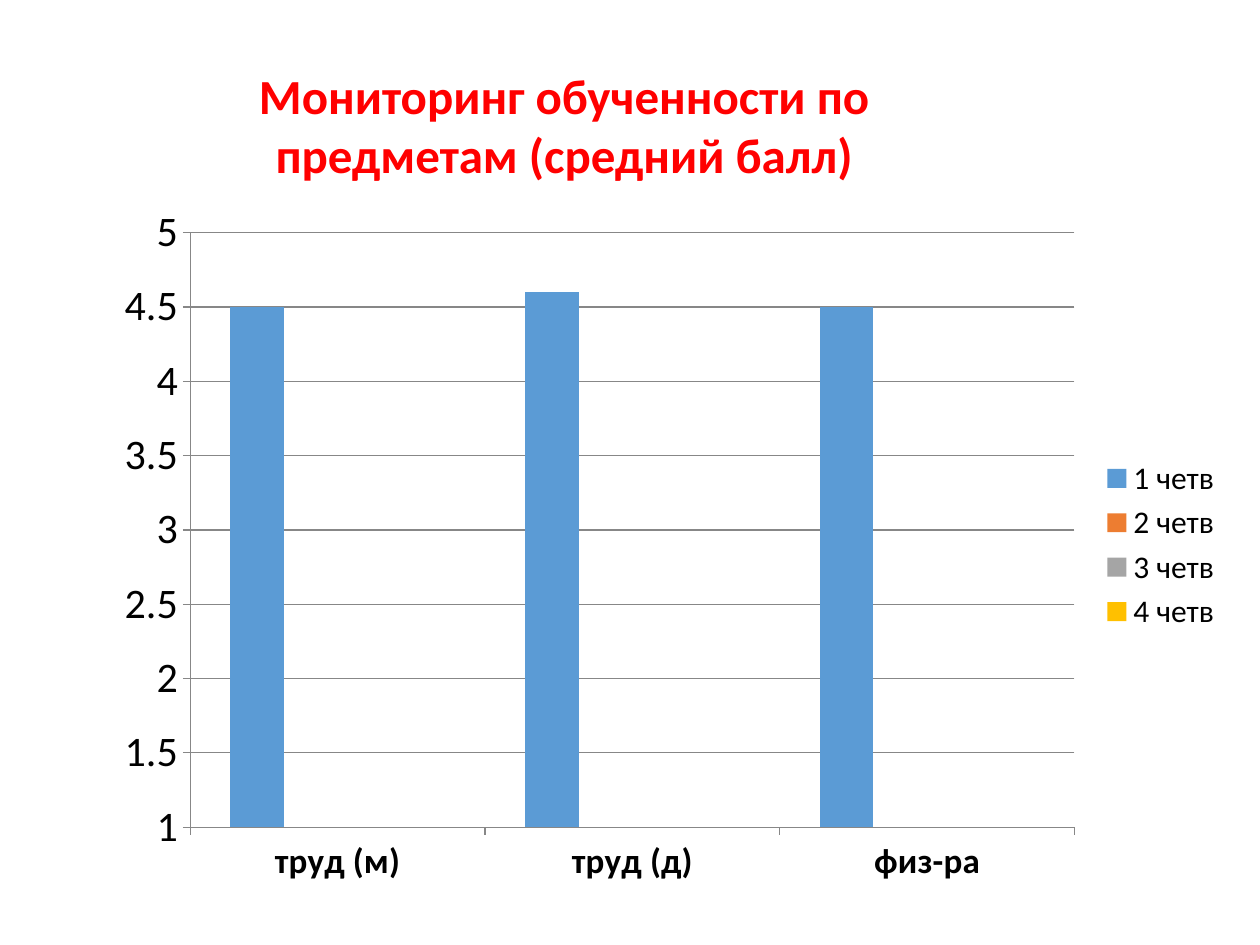
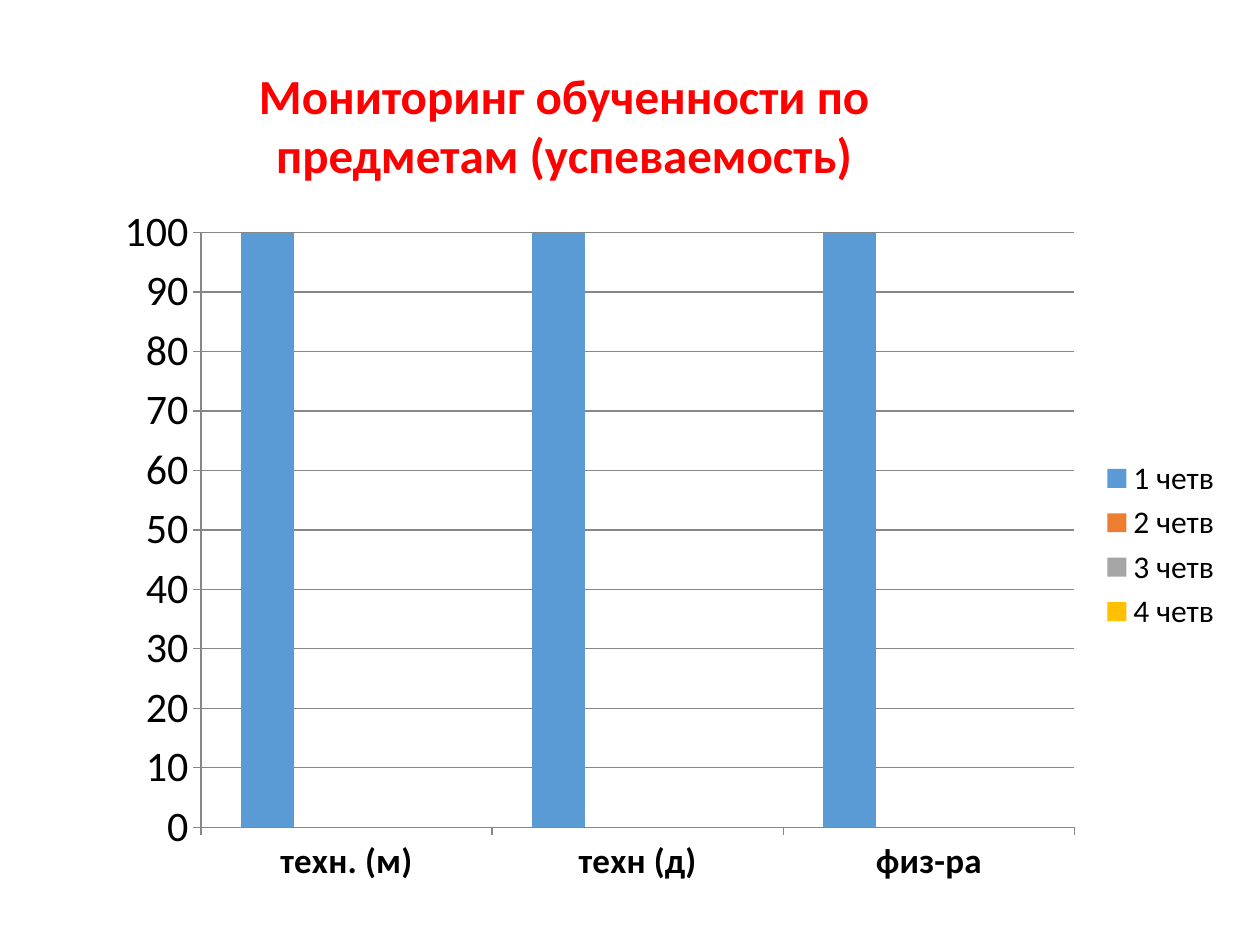
from dataclasses import dataclass

from pptx import Presentation
from pptx.chart.data import CategoryChartData
from pptx.dml.color import RGBColor
from pptx.enum.chart import XL_CHART_TYPE, XL_LEGEND_POSITION, XL_TICK_MARK
from pptx.enum.text import MSO_AUTO_SIZE, PP_ALIGN
from pptx.util import Pt

COLUMNS = XL_CHART_TYPE.COLUMN_CLUSTERED
LEGEND_RIGHT = XL_LEGEND_POSITION.RIGHT
TICK_OUTSIDE = XL_TICK_MARK.OUTSIDE
TICK_NONE = XL_TICK_MARK.NONE
CENTER = PP_ALIGN.CENTER
GROW = MSO_AUTO_SIZE.SHAPE_TO_FIT_TEXT

EMU_PER_INCH = 914400
PX_PER_INCH = 126
SLIDE_SIZE = (1260, 945)
TITLE_BOX = (125, 59, 878, 131)
CHART_BOX = (102, 193, 1133, 704)
QUARTERS = ("1 четв", "2 четв", "3 четв", "4 четв")


@dataclass(frozen=True)
class Theme:
    font: str = "Calibri"
    title: str = "FF0000"
    text: str = "000000"
    axis: str = "878787"
    series: tuple = ("5B9BD5", "ED7D31", "A5A5A5", "FFC000")
    title_size: int = 28
    value_size: int = 24
    category_size: int = 20
    legend_size: int = 18


THEME = Theme()


def px(length):
    return round(length * EMU_PER_INCH / PX_PER_INCH)


def place(box):
    return [px(length) for length in box]


def format_font(font, size, color=THEME.text, bold=False):
    font.name = THEME.font
    font.size = Pt(size)
    font.bold = bold
    font.color.rgb = RGBColor.from_string(color)


def add_text(slide, text, *, box, size, color, bold=False, align=CENTER):
    shape = slide.shapes.add_textbox(*place(box))
    frame = shape.text_frame
    frame.word_wrap = True
    frame.auto_size = GROW
    paragraph = frame.paragraphs[0]
    paragraph.alignment = align
    run = paragraph.add_run()
    run.text = text
    format_font(run.font, size, color, bold)


def format_line(line):
    line.color.rgb = RGBColor.from_string(THEME.axis)
    line.width = Pt(0.75)


def format_axis(axis, size, bold=False):
    axis.major_tick_mark = TICK_OUTSIDE
    axis.minor_tick_mark = TICK_NONE
    format_font(axis.tick_labels.font, size, bold=bold)
    format_line(axis.format.line)


def add_quarter_chart(slide, subjects, first_quarter, scale, label_last=False):
    data = CategoryChartData(number_format="General")
    data.categories = subjects
    unfilled = [None] * len(subjects)
    for quarter in QUARTERS:
        data.add_series(quarter, first_quarter if quarter == QUARTERS[0] else unfilled)

    chart = slide.shapes.add_chart(COLUMNS, *place(CHART_BOX), data).chart
    chart.has_title = False
    format_font(chart.font, THEME.legend_size)
    chart.has_legend = True
    chart.legend.position = LEGEND_RIGHT
    chart.legend.include_in_layout = False

    plot = chart.plots[0]
    plot.gap_width = 150
    plot.vary_by_categories = False
    for series, color in zip(plot.series, THEME.series):
        series.format.fill.solid()
        series.format.fill.fore_color.rgb = RGBColor.from_string(color)
    if label_last:
        plot.series[-1].data_labels.show_value = True

    format_axis(chart.category_axis, THEME.category_size, bold=True)
    value_axis = chart.value_axis
    format_axis(value_axis, THEME.value_size)
    value_axis.minimum_scale, value_axis.maximum_scale, value_axis.major_unit = scale
    value_axis.has_major_gridlines = True
    format_line(value_axis.major_gridlines.format.line)


def add_monitoring_slide(presentation, measure, **chart_options):
    slide = presentation.slides.add_slide(presentation.slide_layouts[6])
    add_quarter_chart(slide, **chart_options)
    add_text(
        slide,
        f"Мониторинг обученности по предметам ({measure})",
        box=TITLE_BOX,
        size=THEME.title_size,
        color=THEME.title,
        bold=True,
    )


def main():
    presentation = Presentation()
    presentation.slide_width, presentation.slide_height = place(SLIDE_SIZE)
    add_monitoring_slide(
        presentation,
        "средний балл",
        subjects=("труд (м)", "труд (д)", "физ-ра"),
        first_quarter=(4.5, 4.6, 4.5),
        scale=(1, 5, 0.5),
        label_last=True,
    )
    add_monitoring_slide(
        presentation,
        "успеваемость",
        subjects=("техн. (м)", "техн (д)", "физ-ра"),
        first_quarter=(100, 100, 100),
        scale=(0, 100, 10),
    )
    presentation.save("out.pptx")


if __name__ == "__main__":
    main()
